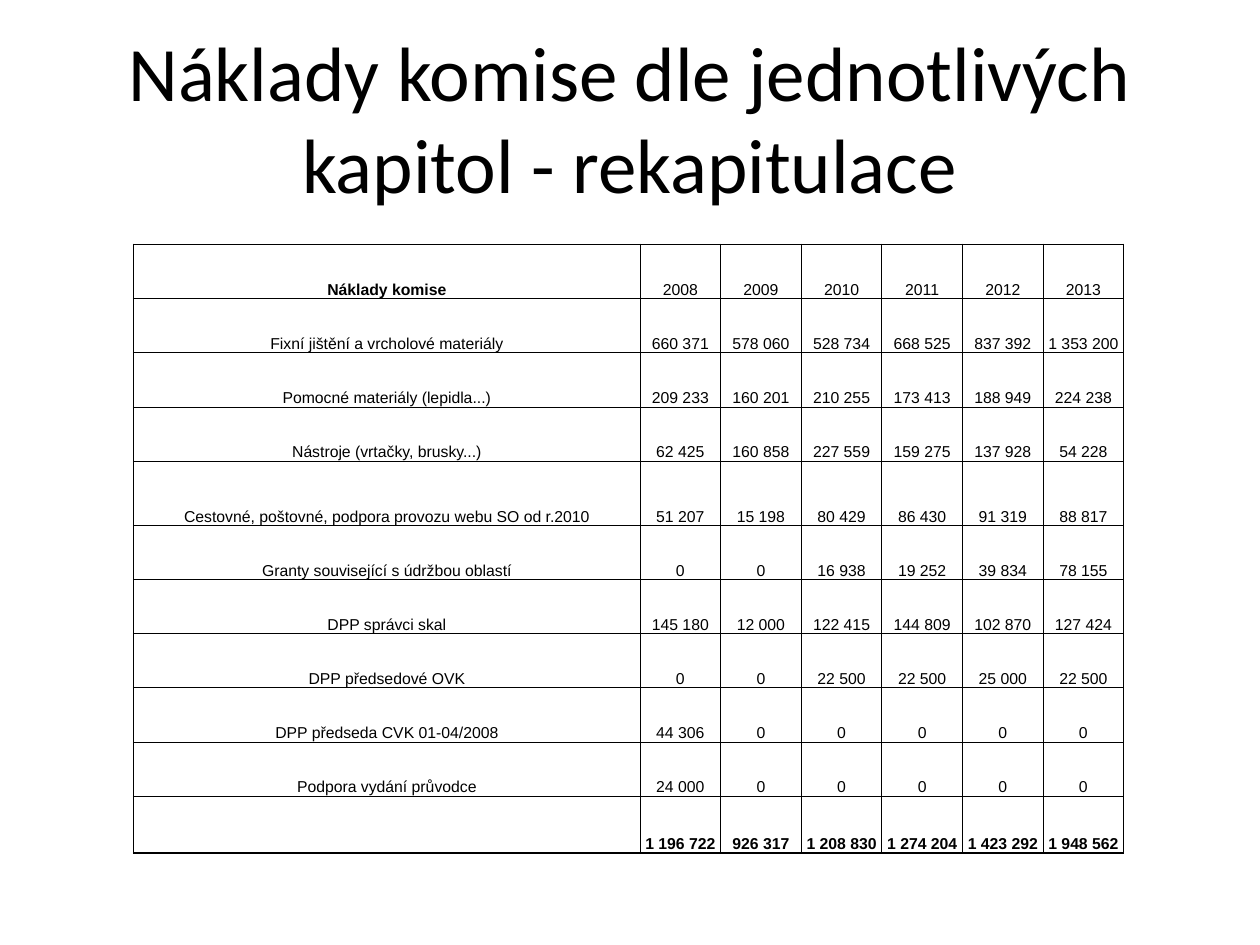
from lxml import etree
from pptx import Presentation
from pptx.dml.color import RGBColor
from pptx.enum.text import MSO_ANCHOR, MSO_AUTO_SIZE, PP_ALIGN
from pptx.oxml.ns import qn
from pptx.util import Inches, Pt

BLACK = "000000"


def write(frame, text, font="Arial", size=9, bold=False, color=BLACK):
    paragraph = frame.paragraphs[0]
    paragraph.alignment = PP_ALIGN.CENTER
    run = paragraph.add_run()
    run.text = text
    run.font.name = font
    run.font.size = Pt(size)
    run.font.bold = bold
    run.font.color.rgb = RGBColor.from_string(color)


def add_border(cell, side, width, color=BLACK):
    line = etree.SubElement(cell._tc.get_or_add_tcPr(), qn(f"a:ln{side}"), w=str(Pt(width)))
    fill = etree.SubElement(line, qn("a:solidFill"))
    etree.SubElement(fill, qn("a:srgbClr"), val=color)


presentation = Presentation()
presentation.slide_width = Inches(10)
presentation.slide_height = Inches(7.5)
slide = presentation.slides.add_slide(presentation.slide_layouts[5])

# Title
title = slide.shapes.title
title.left, title.top = Inches(0.5), Inches(0.3)
title.width, title.height = Inches(9), Inches(1.25)
title.text_frame.word_wrap = True
title.text_frame.auto_size = MSO_AUTO_SIZE.NONE
title.text_frame.vertical_anchor = MSO_ANCHOR.MIDDLE
write(title.text_frame, "Náklady komise dle jednotlivých kapitol - rekapitulace",
      font="Calibri", size=44)

# Costs by chapter and year, totals in the last row
costs = [
    ("Náklady komise", "2008", "2009", "2010", "2011", "2012", "2013"),
    ("Fixní jištění a vrcholové materiály",
     "660 371", "578 060", "528 734", "668 525", "837 392", "1 353 200"),
    ("Pomocné materiály (lepidla...)",
     "209 233", "160 201", "210 255", "173 413", "188 949", "224 238"),
    ("Nástroje (vrtačky, brusky...)",
     "62 425", "160 858", "227 559", "159 275", "137 928", "54 228"),
    ("Cestovné, poštovné, podpora provozu webu SO od r.2010",
     "51 207", "15 198", "80 429", "86 430", "91 319", "88 817"),
    ("Granty související s údržbou oblastí", "0", "0", "16 938", "19 252", "39 834", "78 155"),
    ("DPP správci skal",
     "145 180", "12 000", "122 415", "144 809", "102 870", "127 424"),
    ("DPP předsedové OVK", "0", "0", "22 500", "22 500", "25 000", "22 500"),
    ("DPP předseda CVK 01-04/2008", "44 306", "0", "0", "0", "0", "0"),
    ("Podpora vydání průvodce", "24 000", "0", "0", "0", "0", "0"),
    ("", "1 196 722", "926 317", "1 208 830", "1 274 204", "1 423 292", "1 948 562"),
]
last_row, last_column = len(costs) - 1, len(costs[0]) - 1
column_widths = [4.02] + [0.64] * last_column
row_heights = [0.43] * 4 + [0.51] + [0.43] * 5 + [0.45]

cost_table = slide.shapes.add_table(
    len(costs), len(costs[0]), Inches(1.06), Inches(1.94),
    Inches(sum(column_widths)), Inches(sum(row_heights))).table
cost_table.first_row = False
cost_table.horz_banding = False
for column, width in zip(cost_table.columns, column_widths):
    column.width = Inches(width)
for row, height in zip(cost_table.rows, row_heights):
    row.height = Inches(height)

# Cells: thin grid with a thicker outer frame
for r, values in enumerate(costs):
    for c, value in enumerate(values):
        cell = cost_table.cell(r, c)
        cell.margin_left = cell.margin_right = cell.margin_top = cell.margin_bottom = 0
        cell.vertical_anchor = MSO_ANCHOR.BOTTOM
        if value:
            write(cell.text_frame, value, bold=r == last_row or (r, c) == (0, 0))
        outer_sides = {"L": c == 0, "R": c == last_column, "T": r == 0, "B": r == last_row}
        for side, is_outer in outer_sides.items():
            add_border(cell, side, 1 if is_outer else 0.5)
        cell.fill.background()

presentation.save("out.pptx")
